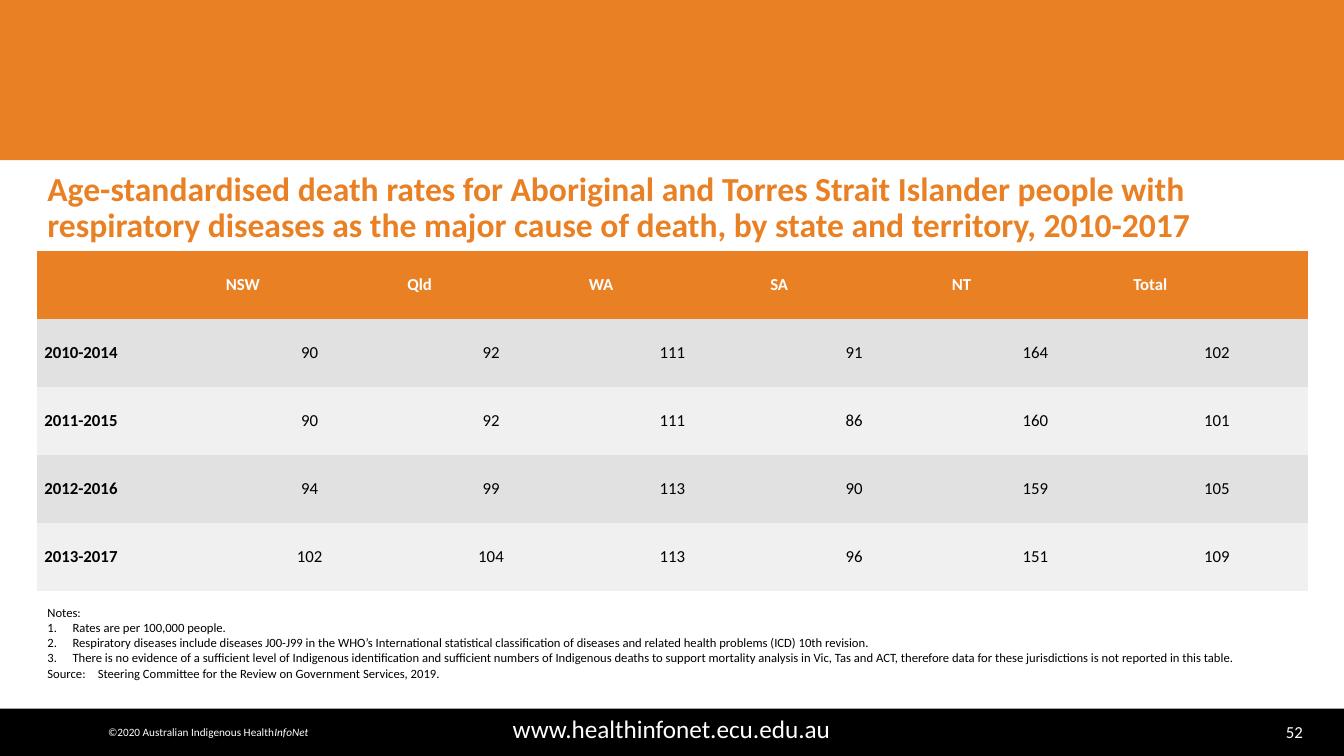
from typing import NamedTuple

from lxml.etree import SubElement
from pptx import Presentation
from pptx.dml.color import RGBColor
from pptx.enum.shapes import MSO_SHAPE
from pptx.enum.text import MSO_ANCHOR, MSO_AUTO_SIZE, PP_ALIGN
from pptx.oxml.ns import qn
from pptx.util import Emu, Pt

PX = 9144  # 100 px to the inch
FONT = "Calibri"
ORANGE = RGBColor(0xEA, 0x80, 0x24)
BLACK = RGBColor(0x00, 0x00, 0x00)
WHITE = RGBColor(0xFF, 0xFF, 0xFF)
BANDS = (RGBColor(0xE1, 0xE1, 0xE1), RGBColor(0xF0, 0xF0, 0xF0))
NO_STYLE = "{2D5ABB26-0587-4C30-8999-92F81FD0307C}"


class Box(NamedTuple):
    left: int
    top: int
    width: int
    height: int

    def emu(self) -> list[Emu]:
        return [Emu(v * PX) for v in self]


class Band(NamedTuple):
    box: Box
    color: RGBColor


class Label(NamedTuple):
    box: Box
    runs: tuple[str, ...]  # every second run is italic
    size: int
    align: PP_ALIGN
    wrap: bool = True


class Note(NamedTuple):
    text: str
    numbered: bool = False


TITLE = ("Age-standardised death rates for Aboriginal and Torres Strait Islander people with "
         "respiratory diseases as the major cause of death, by state and territory, 2010-2017")
BACKDROP = (
    Band(Box(-3, 0, 1336, 159), ORANGE),
    Band(Box(0, 703, 1333, 47), BLACK),
)
FOOTER = (
    Label(Box(1195, 711, 107, 30), ("52",), 12, PP_ALIGN.RIGHT),
    Label(Box(62, 703, 1208, 39), ("www.healthinfonet.ecu.edu.au",), 18, PP_ALIGN.CENTER),
    Label(Box(92, 714, 229, 24), ("©2020 Australian Indigenous Health", "InfoNet"), 8,
          PP_ALIGN.CENTER, wrap=False),
)
RATES = (
    ("", "NSW", "Qld", "WA", "SA", "NT", "Total"),
    ("2010-2014", 90, 92, 111, 91, 164, 102),
    ("2011-2015", 90, 92, 111, 86, 160, 101),
    ("2012-2016", 94, 99, 113, 90, 159, 105),
    ("2013-2017", 102, 104, 113, 96, 151, 109),
)
NOTES = (
    Note("Notes:"),
    Note("Rates are per 100,000 people.", True),
    Note("Respiratory diseases include diseases J00-J99 in the WHO’s International statistical "
         "classification of diseases and related health problems (ICD) 10th revision.", True),
    Note("There is no evidence of a sufficient level of Indigenous identification and sufficient "
         "numbers of Indigenous deaths to support mortality analysis in Vic, Tas and ACT, "
         "therefore data for these jurisdictions is not reported in this table.", True),
    Note("Source: \tSteering Committee for the Review on Government Services, 2019."),
)


def add_run(p, text: str, size: int, color: RGBColor, bold: bool = False,
            italic: bool = False) -> None:
    r = p.add_run()
    r.text = text
    r.font.name, r.font.size = FONT, Pt(size)
    r.font.bold, r.font.italic = bold, italic
    r.font.color.rgb = color


def place(sp, box: Box) -> None:
    sp.left, sp.top, sp.width, sp.height = box.emu()


def add_band(s, band: Band) -> None:
    sp = s.shapes.add_shape(MSO_SHAPE.RECTANGLE, *band.box.emu())
    sp.shadow.inherit = False
    sp.fill.solid()
    sp.fill.fore_color.rgb = band.color
    sp.line.fill.background()


def add_label(s, label: Label) -> None:
    tf = s.shapes.add_textbox(*label.box.emu()).text_frame
    tf.word_wrap = label.wrap
    tf.vertical_anchor = MSO_ANCHOR.MIDDLE
    p = tf.paragraphs[0]
    p.alignment = label.align
    for i, text in enumerate(label.runs):
        add_run(p, text, label.size, WHITE, italic=i % 2 == 1)


def fill_title(sp) -> None:
    place(sp, Box(37, 165, 1260, 84))
    tf = sp.text_frame
    tf.word_wrap = True
    tf.auto_size = MSO_AUTO_SIZE.NONE
    tf.vertical_anchor = MSO_ANCHOR.MIDDLE
    p = tf.paragraphs[0]
    p.alignment = PP_ALIGN.LEFT
    p.line_spacing = 0.9
    add_run(p, TITLE, 24, ORANGE, bold=True)


def add_rates(s, box: Box) -> None:
    table = s.shapes.add_table(len(RATES), len(RATES[0]), *box.emu()).table
    table._tbl.tblPr.find(qn("a:tableStyleId")).text = NO_STYLE
    for i, row in enumerate(RATES):
        for j, value in enumerate(row):
            header, period = i == 0, j == 0
            cell = table.cell(i, j)
            cell.fill.solid()
            cell.fill.fore_color.rgb = ORANGE if header else BANDS[(i - 1) % 2]
            cell.vertical_anchor = MSO_ANCHOR.MIDDLE
            cell.margin_left = cell.margin_right = Emu(7 * PX)
            cell.margin_top = cell.margin_bottom = 0
            if value == "":
                continue
            p = cell.text_frame.paragraphs[0]
            p.space_after = Pt(5)
            if not header:
                p.alignment = PP_ALIGN.JUSTIFY if period else PP_ALIGN.CENTER
            add_run(p, str(value), 12, WHITE if header else BLACK, bold=header or period)


def fill_notes(sp) -> None:
    place(sp, Box(37, 595, 1260, 94))
    tf = sp.text_frame
    tf.word_wrap = True
    tf.auto_size = MSO_AUTO_SIZE.NONE
    tf.vertical_anchor = MSO_ANCHOR.TOP
    for i, note in enumerate(NOTES):
        p = tf.paragraphs[0] if i == 0 else tf.add_paragraph()
        p.alignment = PP_ALIGN.LEFT
        p.line_spacing = 1.0
        p.space_before = p.space_after = Pt(0)
        # Numbering, indent and tab stops
        pPr = p._p.get_or_add_pPr()
        indent = 25 * PX if note.numbered else 0
        pPr.set("marL", str(indent))
        pPr.set("indent", str(-indent))
        if note.numbered:
            SubElement(pPr, qn("a:buFont"), typeface="+mj-lt")
            SubElement(pPr, qn("a:buAutoNum"), type="arabicPeriod")
        else:
            SubElement(pPr, qn("a:buNone"))
        tabs = SubElement(pPr, qn("a:tabLst"))
        for stop in (50, 65):
            SubElement(tabs, qn("a:tab"), pos=str(stop * PX), algn="l")
        add_run(p, note.text, 9, BLACK)


def main() -> None:
    prs = Presentation()
    prs.slide_width, prs.slide_height = Emu(1333 * PX), Emu(750 * PX)
    s = prs.slides.add_slide(prs.slide_layouts[1])

    # Bands and footer
    for band in BACKDROP:
        add_band(s, band)
    for label in FOOTER:
        add_label(s, label)

    # Title, table and notes
    fill_title(s.shapes.title)
    add_rates(s, Box(37, 249, 1260, 337))
    fill_notes(s.placeholders[1])

    prs.save("out.pptx")


if __name__ == "__main__":
    main()
